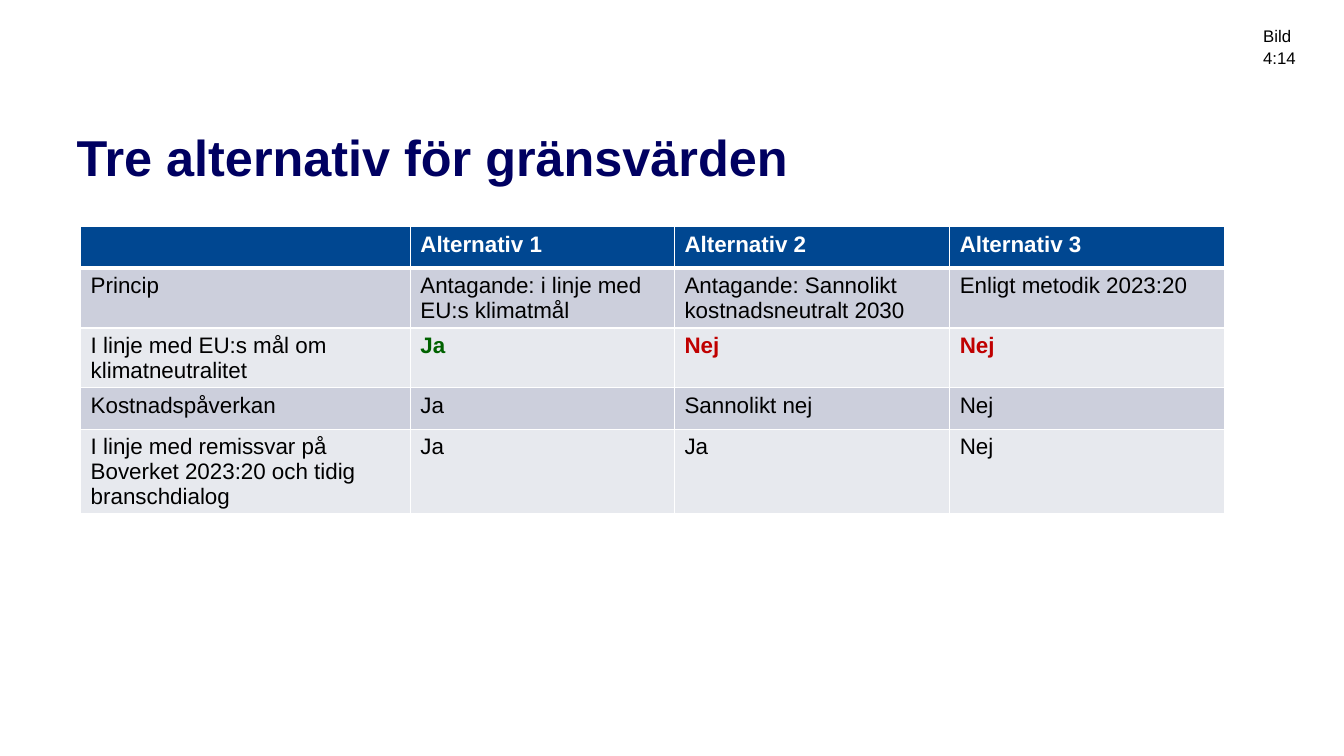
from lxml.etree import SubElement
from pptx import Presentation
from pptx.dml.color import RGBColor
from pptx.enum.text import MSO_ANCHOR, PP_ALIGN
from pptx.oxml.ns import qn
from pptx.util import Inches, Pt

NAVY = RGBColor(0x00, 0x00, 0x61)
BLUE = RGBColor(0x00, 0x47, 0x91)
BAND_DARK = RGBColor(0xCC, 0xCF, 0xDC)
BAND_LIGHT = RGBColor(0xE7, 0xE9, 0xEE)
WHITE = RGBColor(0xFF, 0xFF, 0xFF)
BLACK = RGBColor(0x00, 0x00, 0x00)
GREEN = RGBColor(0x00, 0x62, 0x00)
RED = RGBColor(0xC0, 0x00, 0x00)

COLUMN_WIDTHS = (3.27, 2.62, 2.73, 2.73)
ROW_HEIGHT = 0.41
ROWS = (
    ("", "Alternativ 1", "Alternativ 2", "Alternativ 3"),
    ("Princip", "Antagande: i linje med EU:s klimatmål",
     "Antagande: Sannolikt kostnadsneutralt 2030", "Enligt metodik 2023:20"),
    ("I linje med EU:s mål om klimatneutralitet", "Ja", "Nej", "Nej"),
    ("Kostnadspåverkan", "Ja", "Sannolikt nej", "Nej"),
    ("I linje med remissvar på Boverket 2023:20 och tidig branschdialog",
     "Ja", "Ja", "Nej"),
)
CLIMATE_ROW = 2
VERDICT_COLORS = {"Ja": GREEN, "Nej": RED}


def set_font(p, size, color, bold=False):
    p.font.name = "Arial"
    p.font.size = Pt(size)
    p.font.bold = bold
    p.font.color.rgb = color


def set_borders(cell, top=1, bottom=1):
    tc_pr = cell._tc.get_or_add_tcPr()
    for side, width in (("L", 1), ("R", 1), ("T", top), ("B", bottom)):
        ln = SubElement(tc_pr, qn(f"a:ln{side}"), w=str(Pt(width)))
        fill = SubElement(ln, qn("a:solidFill"))
        SubElement(fill, qn("a:srgbClr"), val=str(WHITE))


def add_title(slide, left, top, width, height):
    title = slide.shapes.title
    title.left, title.top = Inches(left), Inches(top)
    title.width, title.height = Inches(width), Inches(height)
    tf = title.text_frame
    tf.vertical_anchor = MSO_ANCHOR.TOP
    tf.margin_left = tf.margin_right = Inches(0.1)
    tf.margin_top, tf.margin_bottom = Inches(0.12), Inches(0.05)
    p = tf.paragraphs[0]
    p.text = "Tre alternativ för gränsvärden"
    p.alignment = PP_ALIGN.LEFT
    p.line_spacing = 0.9
    set_font(p, 36, NAVY, True)


def style_cell(cell, row, col):
    """Give a cell its banding, borders and font by its place in the table."""
    header = row == 0
    set_borders(cell, top=3 if row == 1 else 1, bottom=3 if header else 1)
    cell.fill.solid()
    if header:
        cell.fill.fore_color.rgb = BLUE
    else:
        cell.fill.fore_color.rgb = BAND_DARK if row % 2 else BAND_LIGHT
    verdict = row == CLIMATE_ROW and col > 0
    if verdict:
        color = VERDICT_COLORS[cell.text]
    else:
        color = WHITE if header else BLACK
    set_font(cell.text_frame.paragraphs[0], 16, color, header or verdict)


def add_alternatives_table(slide, left, top):
    table = slide.shapes.add_table(
        len(ROWS), len(COLUMN_WIDTHS), Inches(left), Inches(top),
        Inches(sum(COLUMN_WIDTHS)), Inches(ROW_HEIGHT * len(ROWS))).table
    for column, width in zip(table.columns, COLUMN_WIDTHS):
        column.width = Inches(width)
    for row, texts in enumerate(ROWS):
        table.rows[row].height = Inches(ROW_HEIGHT)
        for col, text in enumerate(texts):
            cell = table.cell(row, col)
            cell.text = text
            style_cell(cell, row, col)


def add_slide_number(slide, left, top, width, height):
    tf = slide.shapes.add_textbox(
        Inches(left), Inches(top), Inches(width), Inches(height)).text_frame
    tf.word_wrap = True
    tf.margin_right = Inches(0.2)
    p = tf.paragraphs[0]
    p.text = "Bild 4:14"
    p.line_spacing = 1.08
    set_font(p, 12, BLACK)


def main():
    prs = Presentation()
    prs.slide_width, prs.slide_height = Inches(13.33), Inches(7.5)
    slide = prs.slides.add_slide(prs.slide_layouts[5])
    add_title(slide, 0.66, 1.2, 12.02, 0.62)
    add_alternatives_table(slide, 0.8, 2.25)
    add_slide_number(slide, 12.43, 0.19, 0.84, 0.3)
    prs.save("out.pptx")


if __name__ == "__main__":
    main()
